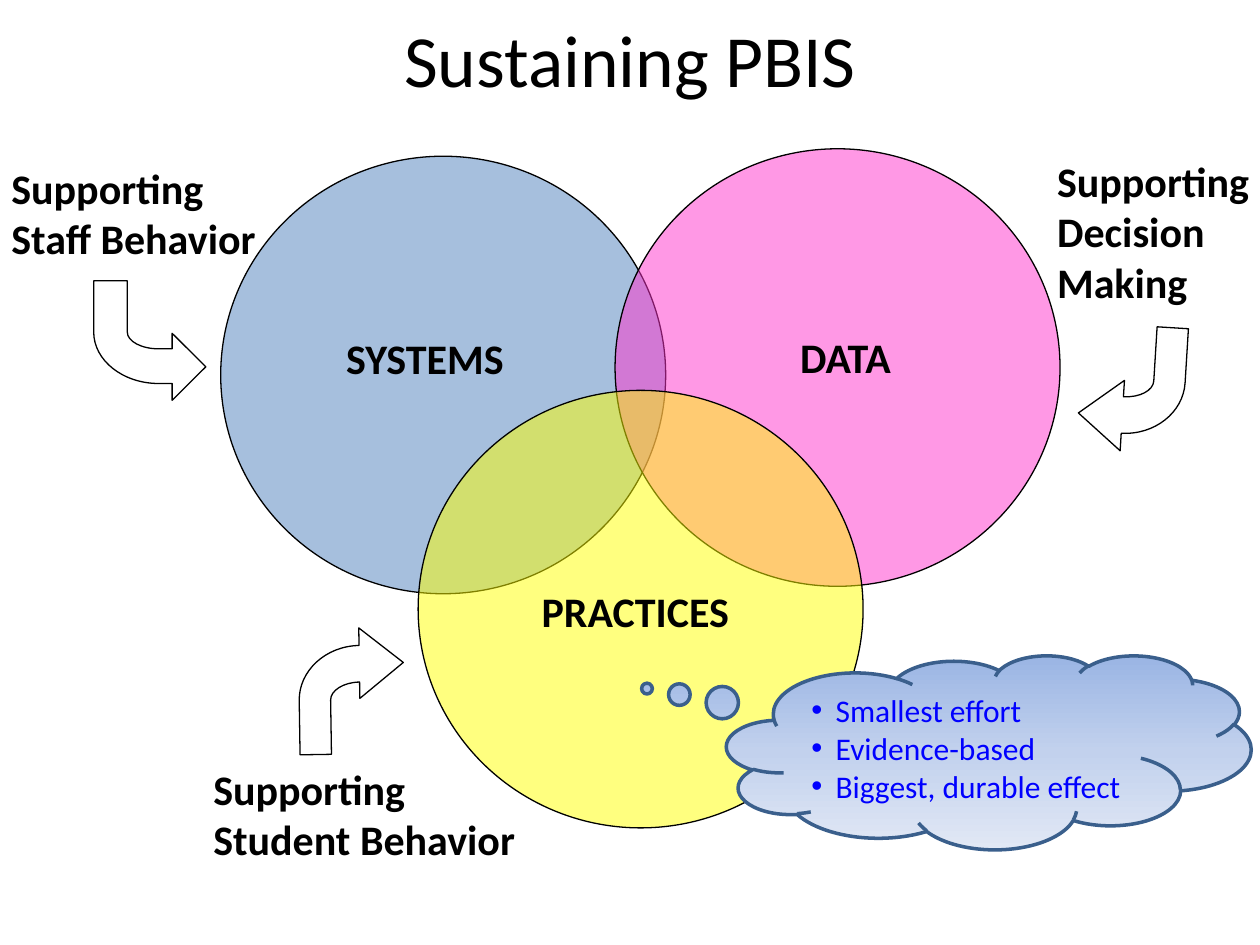
from copy import deepcopy

from lxml import etree
from pptx import Presentation
from pptx.dml.color import RGBColor
from pptx.enum.shapes import MSO_SHAPE
from pptx.enum.text import MSO_ANCHOR, PP_ALIGN
from pptx.oxml.ns import qn
from pptx.util import Cm, Pt

OVAL, CLOUD = MSO_SHAPE.OVAL, MSO_SHAPE.CLOUD_CALLOUT
MIDDLE = MSO_ANCHOR.MIDDLE
LEFT, CENTER = PP_ALIGN.LEFT, PP_ALIGN.CENTER

BLACK = RGBColor(0x00, 0x00, 0x00)
BLUE = RGBColor(0x4F, 0x81, 0xBD)
PINK = RGBColor(0xFF, 0x33, 0xCC)
YELLOW = RGBColor(0xFF, 0xFF, 0x00)
TEXT_BLUE = RGBColor(0x00, 0x00, 0xFF)
CLOUD_LINE = RGBColor(0x3A, 0x5F, 0x8C)
CLOUD_STOPS = (
    RGBColor(0x9A, 0xB5, 0xE4),
    RGBColor(0xC2, 0xD1, 0xED),
    RGBColor(0xE1, 0xE8, 0xF5),
)
FONT = "Calibri"
BEND = 0.58  # where the arrow's bend ends, as a share of its width
ROUND = 0.55  # control point distance for a quarter ellipse


def set_line(sp, color, width):
    sp.shadow.inherit = False
    sp.line.color.rgb = color
    sp.line.width = Pt(width)


def write_lines(tf, lines, size, color, bold=False, align=LEFT):
    tf.word_wrap = True
    for i, line in enumerate(lines):
        p = tf.add_paragraph() if i else tf.paragraphs[0]
        p.text = line
        p.alignment = align
        p.font.name = FONT
        p.font.size = Pt(size)
        p.font.bold = bold
        p.font.color.rgb = color


def add_label(shapes, left, top, width, lines):
    box = shapes.add_textbox(Cm(left), Cm(top), Cm(width), Cm(0.25 + 1.02 * len(lines)))
    write_lines(box.text_frame, lines, 24, BLACK, bold=True)


def add_title(slide, left, top, width, height, text):
    title = slide.shapes.title
    title.left, title.top = Cm(left), Cm(top)
    title.width, title.height = Cm(width), Cm(height)
    title.text_frame.vertical_anchor = MIDDLE
    write_lines(title.text_frame, [text], 42, BLACK, align=CENTER)


def add_venn(slide, left, top):
    """Three half-transparent circles, with their names on top."""
    circles = [(0, 0.15, BLUE), (7.95, 0, PINK), (3.98, 4.87, YELLOW)]
    for dx, dy, color in circles:
        sp = slide.shapes.add_shape(OVAL, Cm(left + dx), Cm(top + dy), Cm(8.97), Cm(8.82))
        sp.fill.solid()
        sp.fill.fore_color.rgb = color
        clr = sp._element.spPr.find(qn("a:solidFill"))[0]
        etree.SubElement(clr, qn("a:alpha")).set("val", "50000")
        set_line(sp, BLACK, 0.75)
    names = [
        ("SYSTEMS", 2.28, 3.58, 4.55),
        ("PRACTICES", 6.22, 8.68, 6.05),
        ("DATA", 11.43, 3.55, 2.44),
    ]
    for name, dx, dy, width in names:
        add_label(slide.shapes, left + dx, top + dy, width, [name])


def bent_arrow_outline(head):
    """Points in a unit square, and the indexes where a curve's three points start."""
    top, bottom, inner, bend_y = 0.14, 0.43, 0.3, 0.57
    neck_top = [(BEND, top)] if head > BEND else []
    neck_bottom = [(head, bottom)] if head > BEND else []
    rise_out, rise_in = bend_y - top, bend_y - bottom
    points = [(1, 0.28), (head, 0), (head, top), *neck_top]
    outer_start = len(points)
    points += [
        (BEND * (1 - ROUND), top), (0, bend_y - ROUND * rise_out), (0, bend_y),
        (0, 1), (inner, 1), (inner, bend_y),
    ]
    inner_start = len(points)
    points += [
        (inner, bend_y - ROUND * rise_in),
        (BEND - ROUND * (BEND - inner), bottom), (BEND, bottom),
        *neck_bottom, (head, 0.56),
    ]
    return points, (outer_start, inner_start)


def curve_segments(sp, starts):
    """Turn the three line segments from each start into one Bezier curve."""
    segments = list(next(sp._element.iter(qn("a:path"))))
    for start in starts:
        first, *rest = segments[start:start + 3]
        curve = etree.Element(qn("a:cubicBezTo"))
        first.addprevious(curve)
        for segment in (first, *rest):
            curve.append(segment[0])
            segment.getparent().remove(segment)


def add_bent_arrow(shapes, left, top, width, height, head, rotation, flip):
    outline, curve_starts = bent_arrow_outline(head)
    points = [
        (Cm(left + x * width), Cm(top + (1 - y if flip else y) * height))
        for x, y in outline
    ]
    builder = shapes.build_freeform(*points[0])
    builder.add_line_segments(points[1:], close=True)
    sp = builder.convert_to_shape()
    curve_segments(sp, curve_starts)
    sp.rotation = rotation
    sp.fill.background()
    set_line(sp, BLACK, 0.75)


def add_support(slide, left, top, width, lines, arrow, head=BEND, rotation=0, flip=False):
    """A label grouped with its arrow; arrow is (dx, dy, width, height)."""
    group = slide.shapes.add_group_shape()
    add_label(group.shapes, left, top, width, lines)
    dx, dy, w, h = arrow
    add_bent_arrow(group.shapes, left + dx, top + dy, w, h, head, rotation, flip)


def add_cloud(slide, left, top, width, height, lines):
    sp = slide.shapes.add_shape(CLOUD, Cm(left), Cm(top), Cm(width), Cm(height))
    sp.adjustments[0], sp.adjustments[1] = -0.652, -0.328
    sp.fill.gradient()
    sp.fill.gradient_angle = 270
    stop_list = sp._element.spPr.find(qn("a:gradFill")).find(qn("a:gsLst"))
    stop_list.insert(1, deepcopy(stop_list[0]))
    for i, (stop, color) in enumerate(zip(sp.fill.gradient_stops, CLOUD_STOPS)):
        stop.position = i / 2
        stop.color.rgb = color
    set_line(sp, CLOUD_LINE, 2)

    tf = sp.text_frame
    tf.vertical_anchor = MIDDLE
    write_lines(tf, lines, 18, TEXT_BLUE)
    for p in tf.paragraphs:
        pPr = p._p.get_or_add_pPr()
        pPr.set("marL", str(Cm(0.49)))
        pPr.set("indent", str(-Cm(0.49)))
        pPr.insert(0, etree.Element(qn("a:buFont"), typeface="Arial"))
        pPr.insert(1, etree.Element(qn("a:buChar"), char="•"))


def main():
    prs = Presentation()
    prs.slide_width, prs.slide_height = Cm(25.4), Cm(19.05)
    slide = prs.slides.add_slide(prs.slide_layouts[5])

    add_title(slide, 0, -0.05, 25.4, 2.46, "Sustaining PBIS")
    add_venn(slide, 4.45, 3)
    add_support(slide, -0.02, 3.15, 6.25, ["Supporting", "Staff Behavior"],
                (1.91, 2.51, 2.26, 2.41), head=0.7, flip=True)
    add_support(slide, 21.06, 3.01, 5.77, ["Supporting", "Decision", "Making"],
                (0.71, 3.55, 2.11, 2.54), rotation=183.5)
    add_support(slide, 4.05, 15.26, 7.52, ["Supporting", "Student Behavior"],
                (1.98, -2.6, 2.11, 2.54), rotation=359.1)
    add_cloud(slide, 14.65, 13.21, 10.57, 3.91,
              ["Smallest effort", "Evidence-based", "Biggest, durable effect"])
    prs.save("out.pptx")


if __name__ == "__main__":
    main()
